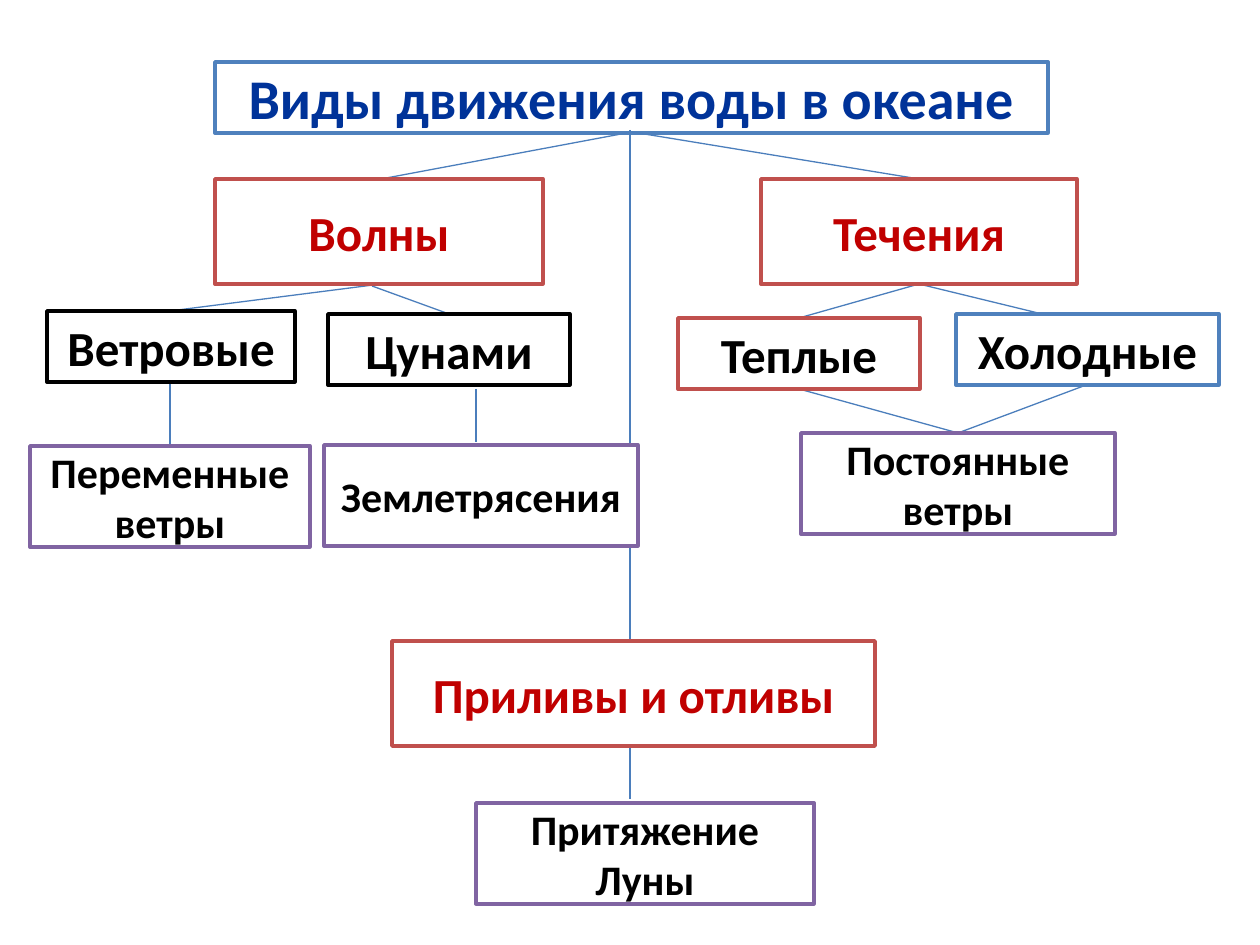
from lxml import etree
from pptx import Presentation
from pptx.dml.color import RGBColor
from pptx.enum.shapes import MSO_CONNECTOR, MSO_SHAPE
from pptx.enum.text import MSO_ANCHOR, MSO_AUTO_SIZE, PP_ALIGN
from pptx.oxml.ns import qn
from pptx.util import Emu, Pt

STRAIGHT = MSO_CONNECTOR.STRAIGHT
RECTANGLE = MSO_SHAPE.RECTANGLE
MIDDLE = MSO_ANCHOR.MIDDLE
CENTER = PP_ALIGN.CENTER
NO_AUTOFIT = MSO_AUTO_SIZE.NONE

WHITE = RGBColor(0xFF, 0xFF, 0xFF)
BLACK = RGBColor(0x00, 0x00, 0x00)
NAVY = RGBColor(0x00, 0x33, 0x99)
DARK_RED = RGBColor(0xC0, 0x00, 0x00)
BLUE = RGBColor(0x4F, 0x81, 0xBD)
RED = RGBColor(0xC0, 0x50, 0x4D)
PURPLE = RGBColor(0x80, 0x64, 0xA2)
LINK_BLUE = RGBColor(0x4B, 0x7E, 0xBC)

SLIDE_WIDTH, SLIDE_HEIGHT = 1260, 945
EMU_PER_PX = 914400 / 126

# Level of the scheme: box height, font size, text colour
TITLE = (71, 32, NAVY)
MOTION = (105, 28, DARK_RED)
KIND = (71, 28, BLACK)
CAUSE = (101, 24, BLACK)

# Text, level, left, top, width, outline colour
NODES = [
    ("Волны", MOTION, 215, 179, 328, RED),
    ("Течения", MOTION, 761, 179, 316, RED),
    ("Приливы и отливы", MOTION, 392, 641, 483, RED),
    ("Ветровые", KIND, 47, 311, 248, BLACK),
    ("Цунами", KIND, 328, 314, 242, BLACK),
    ("Теплые", KIND, 678, 318, 242, RED),
    ("Холодные", KIND, 956, 314, 263, BLUE),
    ("Переменные ветры", CAUSE, 30, 446, 280, PURPLE),
    ("Землетрясения", CAUSE, 324, 445, 314, PURPLE),
    ("Постоянные ветры", CAUSE, 801, 433, 314, PURPLE),
    ("Притяжение Луны", CAUSE, 476, 803, 338, PURPLE),
]

# Start and end points of the links between levels
LINKS = [
    (632, 132, 381, 179),
    (630, 130, 630, 639),
    (632, 132, 919, 179),
    (381, 284, 170, 311),
    (372, 286, 449, 314),
    (919, 284, 799, 318),
    (919, 284, 1038, 313),
    (170, 382, 170, 446),
    (476, 389, 476, 442),
    (799, 389, 958, 433),
    (1089, 384, 958, 433),
    (630, 746, 630, 799),
]


def px(length):
    return Emu(round(length * EMU_PER_PX))


class SchemeSlide:
    """Holds the shared style and the slide being filled."""

    font_name = "Calibri"
    outline_width = Pt(2)
    link_width = Pt(0.75)

    def __init__(self, presentation):
        title_only = presentation.slide_layouts[5]
        self.slide = presentation.slides.add_slide(title_only)

    def format_box(self, box, text, level, outline):
        _, size, color = level
        box.fill.solid()
        box.fill.fore_color.rgb = WHITE
        box.line.color.rgb = outline
        box.line.width = self.outline_width
        frame = box.text_frame
        frame.text = text
        frame_format = {"word_wrap": True, "vertical_anchor": MIDDLE,
                        "auto_size": NO_AUTOFIT}
        for name, value in frame_format.items():
            setattr(frame, name, value)
        paragraph = frame.paragraphs[0]
        paragraph.alignment = CENTER
        font = paragraph.runs[0].font
        font_format = {"name": self.font_name, "size": Pt(size), "bold": True}
        for name, value in font_format.items():
            setattr(font, name, value)
        font.color.rgb = color

    def title(self, text, left, top, width, outline):
        box = self.slide.shapes.title
        place = {"left": left, "top": top, "width": width, "height": TITLE[0]}
        for name, value in place.items():
            setattr(box, name, px(value))
        self.format_box(box, text, TITLE, outline)

    def node(self, text, level, left, top, width, outline):
        box = self.slide.shapes.add_shape(
            RECTANGLE, px(left), px(top), px(width), px(level[0]))
        box.shadow.inherit = False
        self.format_box(box, text, level, outline)

    def link(self, *ends):
        connector = self.slide.shapes.add_connector(STRAIGHT, *map(px, ends))
        connector.line.color.rgb = LINK_BLUE
        connector.line.width = self.link_width
        etree.SubElement(connector._element.spPr, qn("a:effectLst"))


def main():
    presentation = Presentation()
    presentation.slide_width = px(SLIDE_WIDTH)
    presentation.slide_height = px(SLIDE_HEIGHT)

    scheme = SchemeSlide(presentation)
    scheme.title("Виды движения воды в океане", 215, 62, 833, BLUE)
    for ends in LINKS:
        scheme.link(*ends)
    for node in NODES:
        scheme.node(*node)

    presentation.save("out.pptx")


if __name__ == "__main__":
    main()
